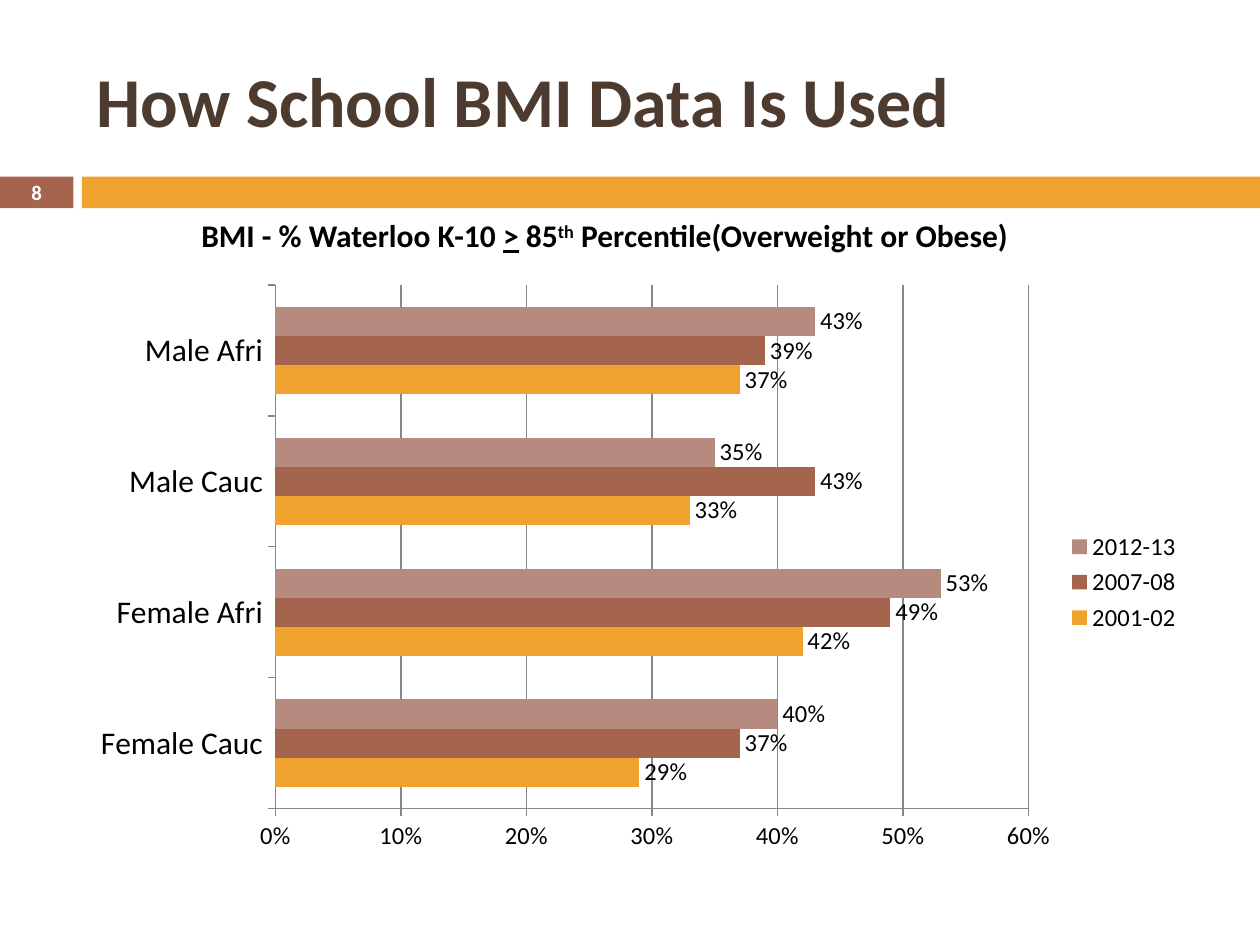
from lxml.etree import SubElement
from pptx import Presentation
from pptx.chart.data import CategoryChartData
from pptx.dml.color import RGBColor
from pptx.enum.chart import XL_CHART_TYPE, XL_LABEL_POSITION, XL_LEGEND_POSITION, XL_TICK_MARK
from pptx.enum.shapes import MSO_SHAPE
from pptx.enum.text import MSO_ANCHOR, PP_ALIGN
from pptx.oxml import parse_xml
from pptx.oxml.ns import nsdecls, qn
from pptx.util import Cm, Pt

COLORS = {
    "amber": "F0A22E",
    "rust": "A5644E",
    "rose": "B58B80",
    "brown": "4E3B30",
    "black": "000000",
    "white": "FFFFFF",
    "grey": "878787",
}


def add_text(slide, box, runs, size, color, anchor, alignment):
    shape = slide.shapes.add_textbox(*[Cm(length) for length in box])
    frame = shape.text_frame
    frame_format = {"word_wrap": True, "vertical_anchor": anchor}
    for name, value in frame_format.items():
        setattr(frame, name, value)
    paragraph = frame.paragraphs[0]
    paragraph.alignment = alignment
    for text, extra in runs:
        run = paragraph.add_run()
        run.text = text
        font_format = {"name": "Calibri", "size": Pt(size), "bold": True}
        for name, value in font_format.items():
            setattr(run.font, name, value)
        run.font.color.rgb = RGBColor.from_string(COLORS[color])
        for name, value in extra.items():
            run._r.get_or_add_rPr().set(name, value)
    return shape


def add_layout(parent, position, following, inner=False):
    for old in parent.findall(qn("c:layout")):
        parent.remove(old)
    layout = parse_xml(f"<c:layout {nsdecls('c')}><c:manualLayout/></c:layout>")
    values = {"layoutTarget": "inner"} if inner else {}
    values |= {"xMode": "edge", "yMode": "edge"}
    values |= dict(zip("xywh", position))
    for name, value in values.items():
        SubElement(layout[0], qn(f"c:{name}")).set("val", str(value))
    parent.find(qn(following)).addprevious(layout)


presentation = Presentation()
presentation.slide_width = Cm(25.4)
presentation.slide_height = Cm(19.05)
slide = presentation.slides.add_slide(presentation.slide_layouts[6])

for left, width, color in [(0, 1.48, "rust"), (1.65, 23.75, "amber")]:
    band = slide.shapes.add_shape(MSO_SHAPE.RECTANGLE, Cm(left), Cm(3.56), Cm(width), Cm(0.64))
    band.shadow.inherit = False
    band.fill.solid()
    band.fill.fore_color.rgb = RGBColor.from_string(COLORS[color])
    band.line.fill.background()

add_text(slide, (1.7, 0.64, 22.66, 2.74), [("How School BMI Data Is Used", {})],
         40, "brown", MSO_ANCHOR.MIDDLE, PP_ALIGN.LEFT)
number = add_text(slide, (0, 3.53, 1.48, 0.69), [("8", {})],
                  11.9, "white", MSO_ANCHOR.MIDDLE, PP_ALIGN.CENTER)
for side in ("left", "right", "top", "bottom"):
    setattr(number.text_frame, f"margin_{side}", 0)

chart_data = CategoryChartData(number_format="0%")
chart_data.categories = ["Female Cauc", "Female Afri", "Male Cauc", "Male Afri"]
series_rows = [
    ("2001-02", (0.29, 0.42, 0.33, 0.37), "amber"),
    ("2007-08", (0.37, 0.49, 0.43, 0.39), "rust"),
    ("2012-13", (0.40, 0.53, 0.35, 0.43), "rose"),
]
for name, values, color in series_rows:
    chart_data.add_series(name, values)

chart = slide.shapes.add_chart(XL_CHART_TYPE.BAR_CLUSTERED, Cm(1.7), Cm(5.51),
                               Cm(22.66), Cm(11.86), chart_data).chart
chart.has_title = False
chart.has_legend = True
chart.legend.position = XL_LEGEND_POSITION.RIGHT
chart.legend.include_in_layout = False

plot = chart.plots[0]
plot_format = {"gap_width": 150, "overlap": 0, "vary_by_categories": False, "has_data_labels": True}
for name, value in plot_format.items():
    setattr(plot, name, value)
labels = plot.data_labels
label_format = {
    "show_value": True,
    "number_format": "0%",
    "number_format_is_linked": False,
    "position": XL_LABEL_POSITION.OUTSIDE_END,
}
for name, value in label_format.items():
    setattr(labels, name, value)
for series, (name, values, color) in zip(plot.series, series_rows):
    series.format.fill.solid()
    series.format.fill.fore_color.rgb = RGBColor.from_string(COLORS[color])

value_axis = chart.value_axis
category_axis = chart.category_axis
value_format = {
    "minimum_scale": 0,
    "maximum_scale": 0.6,
    "major_unit": 0.1,
    "has_major_gridlines": True,
}
for name, value in value_format.items():
    setattr(value_axis, name, value)
value_axis.tick_labels.number_format = "0%"
value_axis.tick_labels.number_format_is_linked = False
for axis in (value_axis, category_axis):
    axis.major_tick_mark = XL_TICK_MARK.OUTSIDE
for line in (value_axis.format.line, category_axis.format.line, value_axis.major_gridlines.format.line):
    line.width = Pt(0.75)
    line.color.rgb = RGBColor.from_string(COLORS["grey"])

chart_fonts = [
    (chart.font, 18),
    (category_axis.tick_labels.font, 18),
    (value_axis.tick_labels.font, 14),
    (chart.legend.font, 14),
    (labels.font, 14),
]
for font, size in chart_fonts:
    font.name = "Calibri"
    font.size = Pt(size)
    font.color.rgb = RGBColor.from_string(COLORS["black"])

add_layout(chart._chartSpace.chart.plotArea, (0.17, 0.02, 0.67, 0.89), "c:barChart", inner=True)
add_layout(chart.legend._element, (0.86, 0.43, 0.13, 0.19), "c:overlay")

subtitle_runs = [
    ("BMI - % Waterloo K-10 ", {}),
    (">", {"u": "sng"}),
    (" 85", {}),
    ("th", {"baseline": "30000"}),
    (" Percentile(Overweight or Obese)", {}),
]
add_text(slide, (3.81, 4.24, 17.58, 1.02), subtitle_runs, 18, "black", MSO_ANCHOR.TOP, PP_ALIGN.LEFT)

presentation.save("out.pptx")
